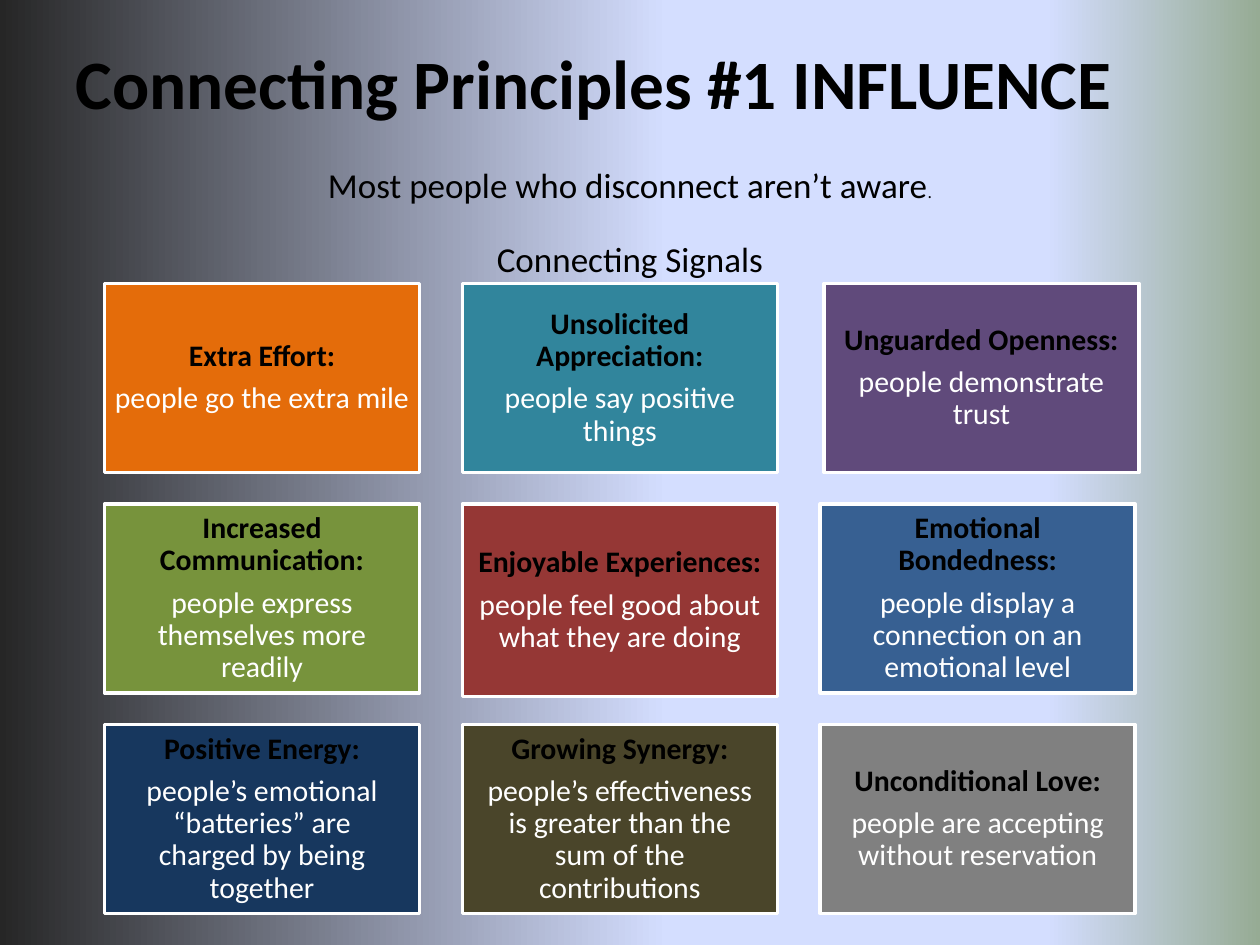
from copy import deepcopy

from pptx import Presentation
from pptx.dml.color import RGBColor
from pptx.enum.shapes import MSO_SHAPE
from pptx.enum.text import MSO_ANCHOR, MSO_AUTO_SIZE, PP_ALIGN
from pptx.oxml.ns import qn
from pptx.util import Inches, Pt

RECT = MSO_SHAPE.RECTANGLE
MIDDLE = MSO_ANCHOR.MIDDLE
LEFT, CENTER = PP_ALIGN.LEFT, PP_ALIGN.CENTER
NO_FIT = MSO_AUTO_SIZE.NONE
FONT = "Calibri"

COLORS = {
    "black": "000000", "white": "FFFFFF", "orange": "E46C0A",
    "teal": "31859C", "purple": "604A7B", "green": "77933C",
    "red": "953735", "blue": "376092", "navy": "17375E",
    "olive": "4A452A", "gray": "808080", "charcoal": "262626",
    "lavender": "D4DEFF", "sage": "96AB94",
}
GRADIENT = [(0, "charcoal"), (53, "lavender"), (83, "lavender"), (100, "sage")]

# heading, text, fill, inset, left shift, extra height
SIGNALS = [
    ("Extra Effort:", "people go the extra mile", "orange", 0.07, 0, 0),
    ("Unsolicited Appreciation:", "people say positive things", "teal", 0.07, 0, 0),
    ("Unguarded Openness:", "people demonstrate trust", "purple", 0.07, 0.03, 0),
    ("Increased Communication:", "people express themselves more readily",
     "green", 0.09, 0, 0),
    ("Enjoyable Experiences:", "people feel good about what they are doing",
     "red", 0.09, 0, 0.03),
    ("Emotional Bondedness:", "people display a connection on an emotional level",
     "blue", 0.11, 0, 0),
    ("Positive Energy:", "people’s emotional “batteries” are charged by being together",
     "navy", 0.25, 0, 0),
    ("Growing Synergy:",
     "people’s effectiveness is greater than the sum of the contributions",
     "olive", 0.14, 0, 0),
    ("Unconditional Love:", "people are accepting without reservation",
     "gray", 0.11, 0, 0),
]


def rgb(name):
    return RGBColor.from_string(COLORS[name])


def add_run(p, text, size, color="black", bold=False):
    r = p.add_run()
    r.text = text
    r.font.name = FONT
    r.font.size = Pt(size)
    r.font.bold = bold
    r.font.color.rgb = rgb(color)


def format_paragraph(p, align=CENTER, before=0, after=0, spacing=1.0):
    p.alignment = align
    p.space_before = Pt(before)
    p.space_after = Pt(after)
    p.line_spacing = spacing


def place(sp, left, top, width, height):
    sp.left, sp.top = Inches(left), Inches(top)
    sp.width, sp.height = Inches(width), Inches(height)


def set_background(s):
    fill = s.background.fill
    fill.gradient()
    fill.gradient_angle = 0
    gs_list = next(s.element.iter(qn("a:gsLst")))
    for _ in range(len(GRADIENT) - len(gs_list)):
        gs_list.append(deepcopy(gs_list[0]))
    for stop, (position, color) in zip(fill.gradient_stops, GRADIENT):
        stop.position = position / 100
        stop.color.rgb = rgb(color)


def fill_title(sp, left, top, width, height):
    place(sp, left, top, width, height)
    tf = sp.text_frame
    tf.auto_size = NO_FIT
    tf.vertical_anchor = MIDDLE
    p = tf.paragraphs[0]
    format_paragraph(p, align=LEFT)
    add_run(p, "Connecting Principles #1 INFLUENCE", 39.6, bold=True)


def fill_intro(sp, left, top, width, height):
    place(sp, left, top, width, height)
    tf = sp.text_frame
    tf.auto_size = NO_FIT
    lines = [
        (0, [("Most people who disconnect aren’t aware", 20), (".", 10)]),
        (18, [("Connecting Signals", 20)]),
    ]
    for i, (before, runs) in enumerate(lines):
        p = tf.add_paragraph() if i else tf.paragraphs[0]
        format_paragraph(p, before=before)
        pPr = p._p.get_or_add_pPr()
        pPr.set("marL", "0")
        pPr.set("indent", "0")
        pPr.append(pPr.makeelement(qn("a:buNone"), {}))
        for text, size in runs:
            add_run(p, text, size)


def add_card(s, left, top, width, height, heading, text, color, inset):
    sp = s.shapes.add_shape(RECT, Inches(left), Inches(top),
                            Inches(width), Inches(height))
    sp.shadow.inherit = False
    sp.fill.solid()
    sp.fill.fore_color.rgb = rgb(color)
    sp.line.color.rgb = rgb("white")
    sp.line.width = Pt(2)
    tf = sp.text_frame
    tf.word_wrap = True
    tf.vertical_anchor = MIDDLE
    tf.margin_left = tf.margin_right = Inches(inset)
    tf.margin_top = tf.margin_bottom = Inches(inset)
    for p, line, ink in ((tf.paragraphs[0], heading, "black"),
                         (tf.add_paragraph(), text, "white")):
        format_paragraph(p, after=6, spacing=0.9)
        add_run(p, line, 17, color=ink, bold=ink == "black")


def add_signal_grid(s, left, top, width, height, columns=3, gap_x=0.34, gap_y=0.25):
    rows = len(SIGNALS) // columns
    card_w = (width - gap_x * (columns - 1)) / columns
    card_h = (height - gap_y * (rows - 1)) / rows
    for i, (heading, text, color, inset, shift, extra) in enumerate(SIGNALS):
        row, column = divmod(i, columns)
        add_card(s, left + column * (card_w + gap_x) + shift,
                 top + row * (card_h + gap_y), card_w, card_h + extra,
                 heading, text, color, inset)


def main():
    prs = Presentation()
    prs.slide_width, prs.slide_height = Inches(10), Inches(7.5)
    s = prs.slides.add_slide(prs.slide_layouts[1])
    set_background(s)
    fill_title(s.shapes.title, 0.5, 0.3, 9, 0.7)
    fill_intro(s.placeholders[1], 0.5, 1.25, 9, 6.09)
    add_signal_grid(s, 0.83, 2.25, 8.18, 5)
    prs.save("out.pptx")


if __name__ == "__main__":
    main()
